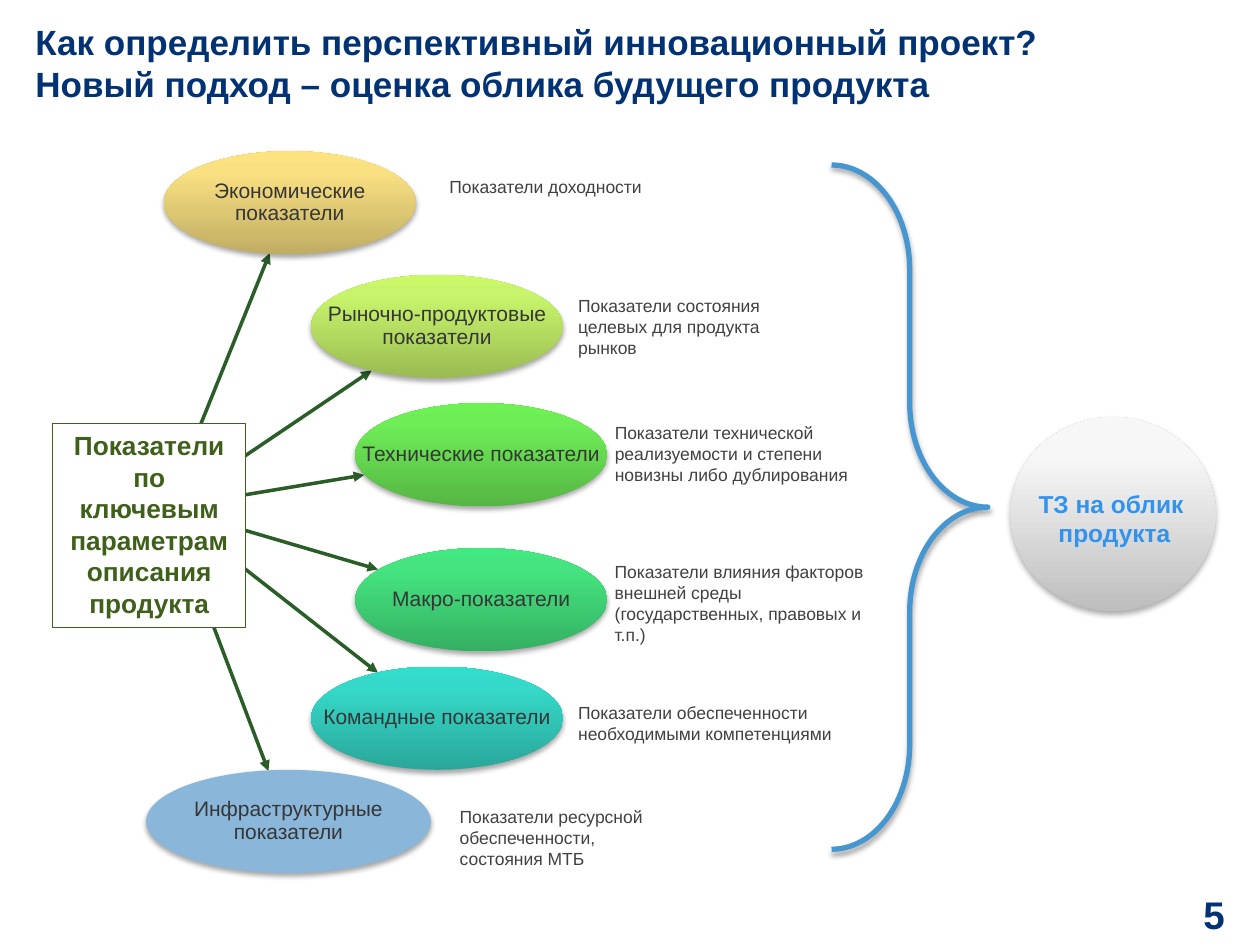
from lxml import etree
from pptx import Presentation
from pptx.dml.color import RGBColor
from pptx.enum.shapes import MSO_CONNECTOR, MSO_SHAPE
from pptx.enum.text import MSO_ANCHOR, PP_ALIGN
from pptx.oxml import parse_xml
from pptx.oxml.ns import qn
from pptx.util import Pt

ELLIPSE = MSO_SHAPE.OVAL
RECTANGLE = MSO_SHAPE.RECTANGLE
BRACE = MSO_SHAPE.RIGHT_BRACE
STRAIGHT = MSO_CONNECTOR.STRAIGHT
TOP = MSO_ANCHOR.TOP
MIDDLE = MSO_ANCHOR.MIDDLE
LEFT = PP_ALIGN.LEFT
CENTER = PP_ALIGN.CENTER
RIGHT = PP_ALIGN.RIGHT

FONT = "Arial"
DRAWING_NS = "http://schemas.openxmlformats.org/drawingml/2006/main"
NAVY = RGBColor(0x00, 0x32, 0x74)
WHITE = RGBColor(0xFF, 0xFF, 0xFF)
OLIVE = RGBColor(0x3F, 0x60, 0x1A)
ARROW_GREEN = RGBColor(0x2A, 0x5D, 0x27)
LABEL_GRAY = RGBColor(0x36, 0x36, 0x37)
NOTE_GRAY = RGBColor(0x41, 0x41, 0x42)
BRACE_BLUE = RGBColor(0x45, 0x96, 0xD1)
GOAL_BLUE = RGBColor(0x32, 0x93, 0xEF)
YELLOW = (RGBColor(0xC0, 0xAD, 0x64), RGBColor(0xF9, 0xE0, 0x81), RGBColor(0xFC, 0xE3, 0x80))
LIME = (RGBColor(0x9A, 0xBC, 0x53), RGBColor(0xC8, 0xF4, 0x6B), RGBColor(0xCA, 0xF8, 0x69))
GREEN = (RGBColor(0x55, 0xB6, 0x43), RGBColor(0x6E, 0xED, 0x57), RGBColor(0x6D, 0xF1, 0x55))
EMERALD = (RGBColor(0x35, 0xB0, 0x63), RGBColor(0x45, 0xE4, 0x80), RGBColor(0x42, 0xE8, 0x80))
TEAL = (RGBColor(0x29, 0xA7, 0x9A), RGBColor(0x35, 0xD9, 0xC9), RGBColor(0x32, 0xDD, 0xCC))
SKY = (RGBColor(0x8A, 0xB7, 0xD9),)
SILVER = (RGBColor(0xBE, 0xBE, 0xBE), RGBColor(0xF7, 0xF7, 0xF7), RGBColor(0xF8, 0xF8, 0xF8))

ELLIPSE_HEIGHT = 59
INDICATORS = [
    ("Экономические показатели", 93.6, 86.4, 144, YELLOW),
    ("Рыночно-продуктовые показатели", 177.8, 157, 144, LIME),
    ("Технические показатели", 203, 230.4, 144, GREEN),
    ("Макро-показатели", 203, 313.2, 144, EMERALD),
    ("Командные показатели", 177.8, 380.9, 144, TEAL),
    ("Инфраструктурные показатели", 83.5, 439.9, 162.7, SKY),
]
NOTES = [
    ("Показатели доходности", 249.8, 97.2, 136, 19.4),
    ("Показатели состояния целевых для продукта рынков", 323.3, 164.9, 147, 43.9),
    ("Показатели технической реализуемости и степени новизны либо дублирования",
     344.2, 237.6, 162, 43.9),
    ("Показатели влияния факторов внешней среды\n(государственных, правовых и т.п.)",
     344.2, 316.8, 172.8, 55.4),
    ("Показатели обеспеченности необходимыми компетенциями", 323.3, 397.4, 162, 31.7),
    ("Показатели ресурсной обеспеченности, состояния МТБ", 255.6, 457.2, 128.2, 43.9),
]
ARROWS = [
    (109.4, 324.7, 153.4, 440.6),
    (130.3, 317.5, 216, 384.5),
    (130.3, 300.2, 216, 325.4),
    (130.3, 284.4, 208.1, 271.4),
    (130.3, 267.1, 212.4, 211.7),
    (109.4, 255.6, 154.1, 144.7),
]


def write_text(shape, text, size, color, bold=False, align=LEFT, anchor=TOP,
               margins=(7.2, 3.6), spacing=1, wrap=True):
    """Fill a shape with uniformly formatted text."""
    frame = shape.text_frame
    frame.text = text
    frame.word_wrap = wrap
    frame.vertical_anchor = anchor
    frame.margin_left = frame.margin_right = Pt(margins[0])
    frame.margin_top = frame.margin_bottom = Pt(margins[1])
    for para in frame.paragraphs:
        para.alignment = align
        para.line_spacing = spacing
        for span in para.runs:
            span.font.name = FONT
            span.font.size = Pt(size)
            span.font.bold = bold
            span.font.color.rgb = color


def add_text(page, bounds, *args, **options):
    """Add a text box at the given bounds."""
    box = page.shapes.add_textbox(*map(Pt, bounds))
    write_text(box, *args, **options)


def add_shadow(shape, alpha=35, blur=3.1, distance=1.8):
    """Give a shape a soft black shadow straight below it."""
    shape.shadow.inherit = False
    effects = shape._element.spPr.find(qn("a:effectLst"))
    effects.append(parse_xml(
        f'<a:outerShdw xmlns:a="{DRAWING_NS}" blurRad="{Pt(blur)}" dist="{Pt(distance)}" '
        f'dir="5400000" rotWithShape="0"><a:srgbClr val="000000">'
        f'<a:alpha val="{alpha * 1000}"/></a:srgbClr></a:outerShdw>'))


def fill_upward(shape, colors):
    """Fill with one colour, or with a three-stop gradient rising from the bottom."""
    if len(colors) == 1:
        shape.fill.solid()
        shape.fill.fore_color.rgb = colors[0]
        return
    shape.fill.gradient()
    shape.fill.gradient_angle = 90
    stops = shape._element.spPr.find(qn("a:gradFill")).find(qn("a:gsLst"))
    for stop in list(stops):
        stops.remove(stop)
    for position, color in zip((0, 80, 100), colors):
        stop = etree.SubElement(stops, qn("a:gs"), pos=str(position * 1000))
        etree.SubElement(stop, qn("a:srgbClr"), val=str(color))


def add_ellipse(page, bounds, colors, **shadow):
    """Add a borderless ellipse with a shadow."""
    ellipse = page.shapes.add_shape(ELLIPSE, *map(Pt, bounds))
    fill_upward(ellipse, colors)
    ellipse.line.fill.background()
    add_shadow(ellipse, **shadow)


def add_arrow(page, ends):
    """Add a straight green arrow between two points."""
    arrow = page.shapes.add_connector(STRAIGHT, *map(Pt, ends))
    arrow.line.color.rgb = ARROW_GREEN
    arrow.line.width = Pt(2)
    etree.SubElement(arrow.line._get_or_add_ln(), qn("a:tailEnd"), type="triangle")
    etree.SubElement(arrow._element.spPr, qn("a:effectLst"))


def add_source_box(page):
    """Add the bordered box that the arrows start from."""
    box = page.shapes.add_shape(RECTANGLE, Pt(30.2), Pt(241.9), Pt(110.2), Pt(116.6))
    box.shadow.inherit = False
    box.fill.solid()
    box.fill.fore_color.rgb = WHITE
    box.line.color.rgb = OLIVE
    box.line.width = Pt(0.75)
    write_text(box, "Показатели по ключевым параметрам описания продукта", 15, OLIVE,
               bold=True, align=CENTER)


def add_brace(page):
    """Add the brace that gathers all indicators."""
    brace = page.shapes.add_shape(BRACE, Pt(475.2), Pt(94.3), Pt(89.3), Pt(391))
    brace.adjustments[0] = 0.67
    brace.adjustments[1] = 0.5
    brace.fill.background()
    brace.line.color.rgb = BRACE_BLUE
    brace.line.width = Pt(3)
    add_shadow(brace)


def main():
    """Build the slide and save the deck."""
    deck = Presentation()
    deck.slide_width, deck.slide_height = Pt(720), Pt(540)
    page = deck.slides.add_slide(deck.slide_layouts[6])
    add_text(page, (20.2, 0, 607, 71.3),
             "Как определить перспективный инновационный проект?\v"
             "Новый подход – оценка облика будущего продукта",
             20, NAVY, bold=True, anchor=MIDDLE, margins=(0, 0))
    for ends in ARROWS:
        add_arrow(page, ends)
    for label, left, top, width, colors in INDICATORS:
        bounds = (left, top, width, ELLIPSE_HEIGHT)
        add_ellipse(page, bounds, colors)
        add_text(page, bounds, label, 12, LABEL_GRAY, align=CENTER, anchor=MIDDLE,
                 margins=(0.7, 0.7), spacing=0.9)
    add_source_box(page)
    add_ellipse(page, (577.4, 238.3, 117.4, 110.9), SILVER, alpha=32, blur=3.5, distance=2.2)
    add_brace(page)
    add_text(page, (586.1, 275.8, 101.5, 41), "ТЗ на облик \nпродукта", 14, GOAL_BLUE,
             bold=True, align=CENTER, wrap=False)
    for note, *bounds in NOTES:
        add_text(page, bounds, note, 10, NOTE_GRAY)
    add_text(page, (650.2, 507.6, 49.7, 29.5), "5", 22, NAVY, bold=True, align=RIGHT,
             anchor=MIDDLE, margins=(0, 0))
    deck.save("out.pptx")


if __name__ == "__main__":
    main()
